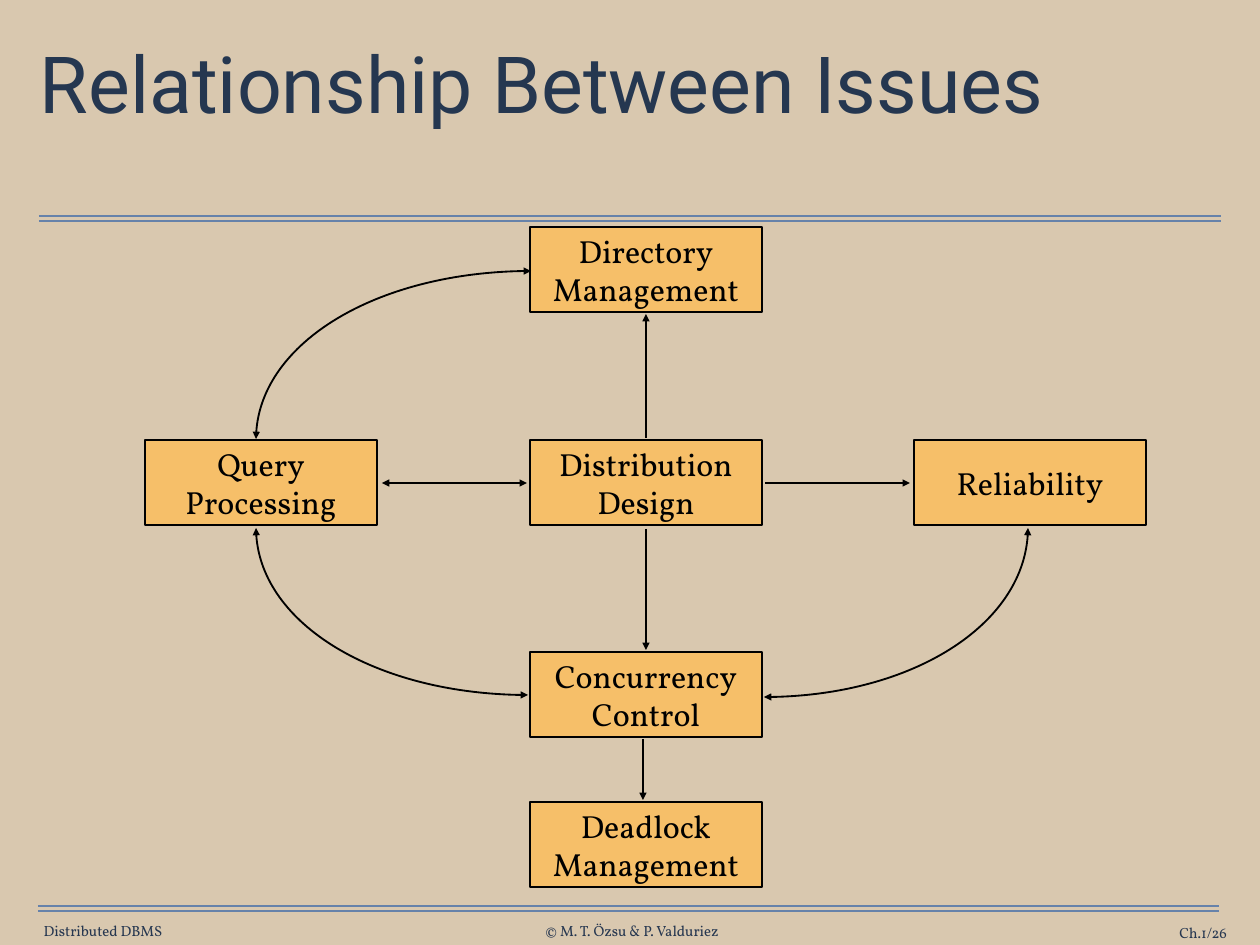
from dataclasses import dataclass

from lxml import etree
from pptx import Presentation
from pptx import util as u
from pptx.dml.color import RGBColor
from pptx.enum import shapes, text
from pptx.oxml import ns

PX = 10320  # EMU in one px
BEND = 0.5523  # Bezier handle length for a quarter ellipse
INK, NAVY, RULE, GOLD, SAND = "000000", "263750", "6682AA", "F6BF69", "D9C8AF"
LEFT, MID, RIGHT = text.PP_ALIGN.LEFT, text.PP_ALIGN.CENTER, text.PP_ALIGN.RIGHT
TOP, CENTRE = text.MSO_ANCHOR.TOP, text.MSO_ANCHOR.MIDDLE
BOX_W, BOX_H = 232, 85


@dataclass
class Box:
    label: str
    x: int
    y: int


@dataclass
class Link:
    x1: int
    y1: int
    x2: int
    y2: int
    both: bool = False


@dataclass
class Label:
    words: str
    x: int
    y: int
    w: int
    h: int
    align: text.PP_ALIGN
    wrap: bool = False
    size: int = 12
    face: str = "Vollkorn"
    colour: str = NAVY
    anchor: text.MSO_ANCHOR = CENTRE
    pad: int = 0
    lead: float = 1.0


RULES = [Link(39, y, 1221, y) for y in (216, 221)]
RULES += [Link(38, y, 1219, y) for y in (906, 911)]
LABELS = [
    Label("Distributed DBMS", 42, 922, 122, 18, MID),
    Label("© M. T. Özsu & P. Valduriez", 540, 922, 184, 18, MID),
    Label("Ch.1/26", 1091, 924, 136, 18, RIGHT, wrap=True),
    Label("Relationship Between Issues", 35, 43, 1191, 156, LEFT, True, 64,
          "Roboto", "253750", TOP, 5, 0.87),
]
BOXES = [
    Box("Directory\nManagement", 530, 227),
    Box("Query\nProcessing", 145, 440),
    Box("Distribution\nDesign", 530, 440),
    Box("Reliability", 914, 440),
    Box("Concurrency\nControl", 530, 652),
    Box("Deadlock\nManagement", 530, 802),
]
ARROWS = [
    Link(646, 438, 646, 314),
    Link(646, 529, 646, 650),
    Link(643, 739, 643, 800),
    Link(765, 483, 910, 483),
    Link(382, 483, 527, 483, both=True),
]
CURVES = [
    Link(256, 439, 531, 271, both=True),
    Link(256, 528, 528, 695, both=True),
    Link(1028, 528, 764, 697, both=True),
]


def px(*sizes: float) -> list[int]:
    return [round(size * PX) for size in sizes]


def rgb(code: str) -> RGBColor:
    return RGBColor.from_string(code)


def stroke(shape, colour: str, width: float) -> None:
    shape.line.color.rgb = rgb(colour)
    shape.line.width = u.Pt(width)


def tips(shape, both: bool) -> None:
    """Add an arrowhead at the end, or at both ends."""
    line = shape.line._get_or_add_ln()
    for tag in ("headEnd", "tailEnd") if both else ("tailEnd",):
        etree.SubElement(line, ns.qn(f"a:{tag}"), type="triangle")


def write(shape, words: str, size: int, face: str, colour: str,
          align: text.PP_ALIGN, anchor: text.MSO_ANCHOR,
          pads: tuple[int, int], wrap: bool = False, lead: float = 1.0) -> None:
    frame = shape.text_frame
    frame.text = words
    frame.word_wrap = wrap
    frame.vertical_anchor = anchor
    frame.margin_left = frame.margin_right = pads[0] * PX
    frame.margin_top = frame.margin_bottom = pads[1] * PX
    for para in frame.paragraphs:
        para.alignment = align
        para.line_spacing = lead
        para.font.size = u.Pt(size)
        para.font.name = face
        para.font.color.rgb = rgb(colour)


def draw_label(slide, label: Label) -> None:
    shape = slide.shapes.add_textbox(*px(label.x, label.y, label.w, label.h))
    write(shape, label.words, label.size, label.face, label.colour, label.align,
          label.anchor, (label.pad, label.pad), label.wrap, label.lead)


def draw_box(slide, box: Box) -> None:
    shape = slide.shapes.add_shape(shapes.MSO_SHAPE.RECTANGLE,
                                   *px(box.x, box.y, BOX_W, BOX_H))
    shape.shadow.inherit = False
    shape.fill.solid()
    shape.fill.fore_color.rgb = rgb(GOLD)
    stroke(shape, INK, 1.5)
    write(shape, box.label, 26, "Vollkorn", INK, MID, CENTRE, (12, 6))


def draw_line(slide, link: Link, colour: str, width: float):
    line = slide.shapes.add_connector(shapes.MSO_CONNECTOR.STRAIGHT,
                                      *px(link.x1, link.y1, link.x2, link.y2))
    stroke(line, colour, width)
    etree.SubElement(line._element.spPr, ns.qn("a:effectLst"))
    return line


def draw_curve(slide, link: Link) -> None:
    """Draw a quarter ellipse that leaves upright and arrives level."""
    bend_y = link.y1 + BEND * (link.y2 - link.y1)
    bend_x = link.x2 - BEND * (link.x2 - link.x1)
    points = [(link.x1, bend_y), (bend_x, link.y2), (link.x2, link.y2)]
    pen = slide.shapes.build_freeform(*px(link.x1, link.y1))
    pen.add_line_segments([px(*point) for point in points], close=False)
    curve = pen.convert_to_shape()
    steps = list(curve._element.iter(ns.qn("a:lnTo")))
    bezier = etree.SubElement(steps[0].getparent(), ns.qn("a:cubicBezTo"))
    for step in steps:
        bezier.append(step[0])
        step.getparent().remove(step)
    curve.shadow.inherit = False
    curve.fill.background()
    stroke(curve, INK, 1.5)
    tips(curve, link.both)


def main() -> None:
    deck = Presentation()
    deck.slide_width, deck.slide_height = px(1260, 945)
    slide = deck.slides.add_slide(deck.slide_layouts[6])
    slide.background.fill.solid()
    slide.background.fill.fore_color.rgb = rgb(SAND)
    for rule in RULES:
        draw_line(slide, rule, RULE, 1)
    for label in LABELS:
        draw_label(slide, label)
    for box in BOXES:
        draw_box(slide, box)
    for arrow in ARROWS:
        tips(draw_line(slide, arrow, INK, 1.5), arrow.both)
    for curve in CURVES:
        draw_curve(slide, curve)
    deck.save("out.pptx")


if __name__ == "__main__":
    main()
